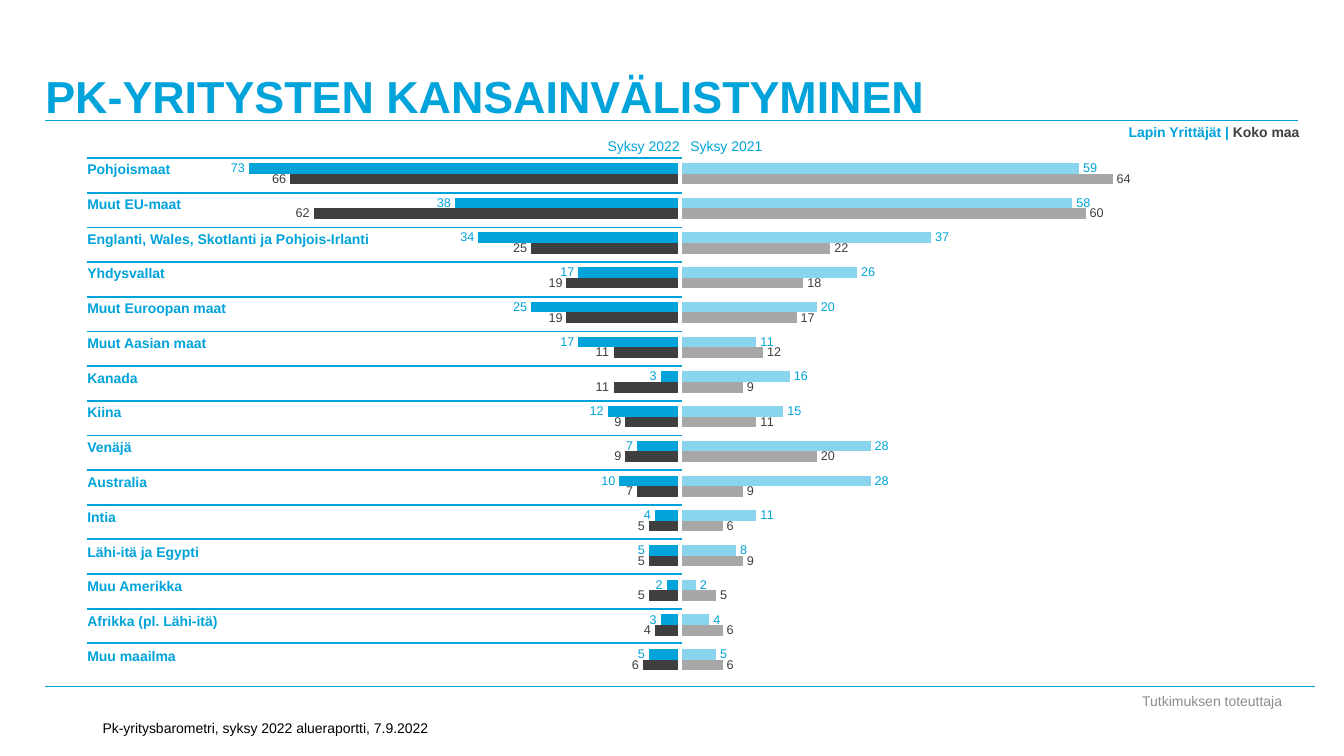
"""Builds the slide on the internationalisation of small firms."""
from dataclasses import dataclass

from lxml.etree import SubElement
from pptx import Presentation
from pptx.chart.data import CategoryChartData
from pptx.dml.color import RGBColor
from pptx.enum.chart import XL_CHART_TYPE, XL_LABEL_POSITION
from pptx.enum.shapes import MSO_CONNECTOR
from pptx.enum.text import MSO_ANCHOR, MSO_AUTO_SIZE, PP_ALIGN
from pptx.oxml import parse_xml
from pptx.oxml.ns import nsdecls, qn
from pptx.util import Pt


@dataclass(frozen=True)
class Theme:
    font: str = "Arial"
    blue: str = "00A3DA"
    dark: str = "3F3F3F"
    pale_blue: str = "8AD5EE"
    pale_grey: str = "A7A7A7"
    grey: str = "8C8C8C"
    black: str = "000000"
    title_size: float = 32
    text_size: float = 10
    value_size: float = 9


class SlideWriter:
    def __init__(self, theme, page):
        self.theme = theme
        self.page = page

    def style(self, font, color, size, bold=False):
        font.name = self.theme.font
        font.size = Pt(size)
        font.bold = bold
        font.color.rgb = RGBColor.from_string(color)

    def title(self, text, left, top, width, height):
        box = self.page.shapes.title
        box.left, box.top, box.width, box.height = Pt(left), Pt(top), Pt(width), Pt(height)
        frame = box.text_frame
        frame.margin_left = frame.margin_right = frame.margin_top = frame.margin_bottom = 0
        frame.vertical_anchor = MSO_ANCHOR.BOTTOM
        frame.auto_size = MSO_AUTO_SIZE.NONE
        frame.text = text
        para = frame.paragraphs[0]
        para.alignment = PP_ALIGN.LEFT
        self.style(para.font, self.theme.blue, self.theme.title_size, bold=True)

    def text(self, spans, left, top, width, height, align=PP_ALIGN.LEFT,
             anchor=MSO_ANCHOR.TOP, bold=False, spacing=None):
        box = self.page.shapes.add_textbox(Pt(left), Pt(top), Pt(width), Pt(height))
        frame = box.text_frame
        frame.word_wrap = True
        frame.vertical_anchor = anchor
        para = frame.paragraphs[0]
        para.alignment = align
        if spacing:
            para.line_spacing = spacing
        for words, color in spans:
            span = para.add_run()
            span.text = words
            font = para.font if len(spans) == 1 else span.font
            self.style(font, color, self.theme.text_size, bold)

    def rule(self, left, right, top, weight):
        line = self.page.shapes.add_connector(
            MSO_CONNECTOR.STRAIGHT, Pt(left), Pt(top), Pt(right), Pt(top))
        line.line.color.rgb = RGBColor.from_string(self.theme.blue)
        line.line.width = Pt(weight)
        SubElement(line._element.spPr, qn("a:effectLst"))

    def bars(self, left, maximum, leftward, series_values, colors):
        data = CategoryChartData(number_format="#,##0")
        data.categories = [str(number + 1) for number in range(len(series_values[0]))]
        for number, values in enumerate(series_values, 1):
            data.add_series(f"Series {number}", values)
        chart = self.page.shapes.add_chart(
            XL_CHART_TYPE.BAR_CLUSTERED, Pt(left), Pt(111.6), Pt(360.7), Pt(372.2), data).chart
        chart.has_legend = False
        chart.has_title = False
        self.style(chart.font, self.theme.black, 20)
        chart.category_axis.reverse_order = True
        chart.category_axis.visible = False
        axis = chart.value_axis
        axis.minimum_scale, axis.maximum_scale = 0, maximum
        axis.has_major_gridlines = False
        axis.reverse_order = leftward
        axis.visible = False
        plot = chart.plots[0]
        plot.gap_width, plot.overlap = 127, 0
        plot.vary_by_categories = False
        label_colors = (self.theme.blue, self.theme.dark)
        for series, color, label_color in zip(plot.series, colors, label_colors):
            series.format.fill.solid()
            series.format.fill.fore_color.rgb = RGBColor.from_string(color)
            labels = series.data_labels
            labels.show_value = True
            labels.position = XL_LABEL_POSITION.OUTSIDE_END
            labels.number_format = "#,##0"
            labels.number_format_is_linked = False
            self.style(labels.font, label_color, self.theme.value_size)
        self.fill_frame(chart)

    def fill_frame(self, chart):
        area = chart._chartSpace.chart.plotArea
        for layout in area.findall(qn("c:layout")):
            area.remove(layout)
        area.insert(0, parse_xml(
            f'<c:layout {nsdecls("c")}><c:manualLayout><c:layoutTarget val="inner"/>'
            '<c:xMode val="edge"/><c:yMode val="edge"/><c:x val="0.034"/><c:y val="0"/>'
            '<c:w val="0.932"/><c:h val="1"/></c:manualLayout></c:layout>'))


REGIONS = (
    "Pohjoismaat", "Muut EU-maat", "Englanti, Wales, Skotlanti ja Pohjois-Irlanti",
    "Yhdysvallat", "Muut Euroopan maat", "Muut Aasian maat", "Kanada", "Kiina",
    "Venäjä", "Australia", "Intia", "Lähi-itä ja Egypti", "Muu Amerikka",
    "Afrikka (pl. Lähi-itä)", "Muu maailma",
)
AUTUMN_2022 = (
    (73, 38, 34, 17, 25, 17, 3, 12, 7, 10, 4, 5, 2, 3, 5),
    (66, 62, 25, 19, 19, 11, 11, 9, 9, 7, 5, 5, 5, 4, 6),
)
AUTUMN_2021 = (
    (59, 58, 37, 26, 20, 11, 16, 15, 28, 28, 11, 8, 2, 4, 5),
    (64, 60, 22, 18, 17, 12, 9, 11, 20, 9, 6, 9, 5, 6, 6),
)


def main():
    theme = Theme()
    deck = Presentation()
    deck.slide_width, deck.slide_height = Pt(960), Pt(540)
    writer = SlideWriter(theme, deck.slides.add_slide(deck.slide_layouts[5]))

    writer.title("PK-YRITYSTEN KANSAINVÄLISTYMINEN", 32.4, 0, 885.6, 87.8)
    writer.text([("Tutkimuksen toteuttaja", theme.grey)], 803.5, 491, 124.6, 18.7,
                PP_ALIGN.CENTER, MSO_ANCHOR.MIDDLE)
    writer.text([("Pk-yritysbarometri, syksy 2022 alueraportti, 7.9.2022", theme.black)],
                66.2, 504, 300.2, 25.2, anchor=MSO_ANCHOR.BOTTOM)
    writer.rule(32.4, 927.4, 86.4, 0.75)
    writer.rule(32.4, 939.6, 490.3, 0.75)
    writer.text([("Lapin Yrittäjät | ", theme.blue), ("Koko maa", theme.dark)],
                585.4, 85, 349.9, 19.4, PP_ALIGN.RIGHT, bold=True)

    writer.bars(136.1, 80, True, AUTUMN_2022, (theme.blue, theme.dark))
    for row, region in enumerate(REGIONS):
        writer.rule(61.9, 487.4, 113 + row * 24.75, 1.25)
        writer.text([(region, theme.blue)], 55.3, 113.4 + row * 24.85, 229.7, 17.3,
                    bold=True, spacing=0.8)
    writer.bars(475.2, 70, False, AUTUMN_2021, (theme.pale_blue, theme.pale_grey))

    writer.text([("Syksy 2021", theme.blue)], 486, 95, 74.2, 19.4)
    writer.text([("Syksy 2022", theme.blue)], 418.3, 95, 74.2, 19.4, PP_ALIGN.RIGHT)
    deck.save("out.pptx")


if __name__ == "__main__":
    main()
